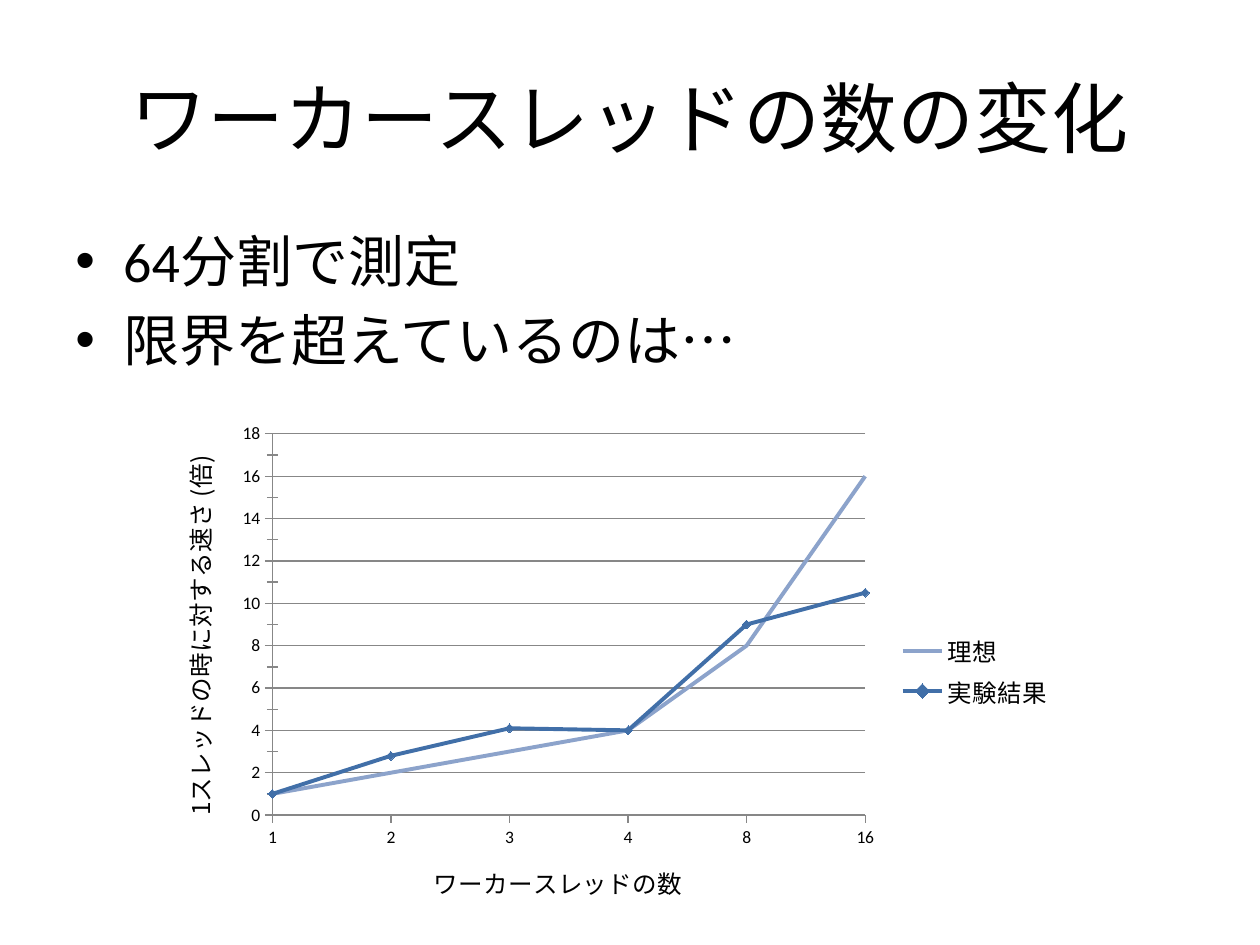
from dataclasses import dataclass

from lxml import etree
from pptx import Presentation
from pptx.chart.data import CategoryChartData
from pptx.dml.color import RGBColor
from pptx.enum import chart as ch, text as tx
from pptx.oxml import ns
from pptx.util import Inches, Pt


@dataclass(frozen=True)
class Theme:
    ink: RGBColor = RGBColor(0, 0, 0)
    rule: RGBColor = RGBColor(0x87, 0x87, 0x87)
    ideal: RGBColor = RGBColor(0x8C, 0xA3, 0xCB)
    measured: RGBColor = RGBColor(0x41, 0x6F, 0xA8)
    latin: str = "Calibri"
    japanese: str = "Noto Sans CJK JP"
    title: int = 44
    body: int = 32
    label: int = 14
    tick: int = 10


THEME = Theme()


def write_text(paragraph, content, *, size, font=THEME.latin, align=None):
    run = paragraph.add_run()
    run.text = content
    run.font.name = font
    run.font.size = Pt(size)
    run.font.bold = False
    run.font.color.rgb = THEME.ink
    east_asian = etree.Element(ns.qn("a:ea"), typeface=THEME.japanese)
    run.font._element.find(ns.qn("a:latin")).addnext(east_asian)
    paragraph.alignment = align


def place(part, box):
    part.left, part.top, part.width, part.height = box


def add_heading(slide, box, content):
    heading = slide.shapes.title
    place(heading, box)
    heading.text_frame.vertical_anchor = tx.MSO_ANCHOR.MIDDLE
    write_text(heading.text_frame.paragraphs[0], content,
               size=THEME.title, align=tx.PP_ALIGN.CENTER)


def add_points(slide, box, points):
    frame = slide.shapes.add_textbox(*box).text_frame
    frame.word_wrap = True
    for index, point in enumerate(points):
        paragraph = frame.add_paragraph() if index else frame.paragraphs[0]
        write_text(paragraph, point, size=THEME.body)
        paragraph.space_before = Pt(THEME.body * 0.2)
        properties = paragraph._p.get_or_add_pPr()
        properties.set("marL", str(Inches(0.38)))
        properties.set("indent", str(-Inches(0.38)))
        etree.SubElement(properties, ns.qn("a:buFont"), typeface="Arial")
        etree.SubElement(properties, ns.qn("a:buChar"), char="•")


def style_line(line, color, width):
    line.color.rgb = color
    line.width = Pt(width)


def style_axis(axis, title, tick):
    axis.major_tick_mark = tick
    axis.tick_labels.font.size = Pt(THEME.tick)
    style_line(axis.format.line, THEME.rule, 0.75)
    write_text(axis.axis_title.text_frame.paragraphs[0], title,
               size=THEME.label, font=THEME.japanese)


def set_plot_area(chart, **fractions):
    plot_area = chart._chartSpace.chart.plotArea
    for old in plot_area.findall(ns.qn("c:layout")):
        plot_area.remove(old)
    layout = etree.Element(ns.qn("c:layout"))
    manual = etree.SubElement(layout, ns.qn("c:manualLayout"))
    settings = {"layoutTarget": "inner", "xMode": "edge", "yMode": "edge"}
    for name, value in {**settings, **fractions}.items():
        etree.SubElement(manual, ns.qn(f"c:{name}"), val=str(value))
    plot_area.insert(0, layout)


def start_line_on_axis(value_axis):
    element = value_axis._element
    for old in element.findall(ns.qn("c:crossBetween")):
        element.remove(old)
    crossing = etree.Element(ns.qn("c:crossBetween"), val="midCat")
    element.find(ns.qn("c:crosses")).addnext(crossing)


def add_speedup_chart(slide, box):
    speedup = CategoryChartData()
    speedup.categories = ["1", "2", "3", "4", "8", "16"]
    speedup.add_series("理想", [1, 2, 3, 4, 8, 16])
    speedup.add_series("実験結果", [1, 2.8, 4.1, 4, 9, 10.5])
    chart = slide.shapes.add_chart(
        ch.XL_CHART_TYPE.LINE_MARKERS, *box, speedup).chart
    chart.has_title = False
    chart.font.name = THEME.latin
    chart.font.size = Pt(THEME.tick)
    chart.font.color.rgb = THEME.ink
    set_plot_area(chart, x=0.13, y=0.04, w=0.65, h=0.74)

    chart.has_legend = True
    chart.legend.position = ch.XL_LEGEND_POSITION.RIGHT
    chart.legend.include_in_layout = False
    chart.legend.font.name = THEME.japanese
    chart.legend.font.size = Pt(THEME.label)

    threads, speed = chart.category_axis, chart.value_axis
    style_axis(threads, "ワーカースレッドの数", ch.XL_TICK_MARK.OUTSIDE)
    style_axis(speed, "1スレッドの時に対する速さ (倍)", ch.XL_TICK_MARK.CROSS)
    speed.axis_title.text_frame._txBody.bodyPr.set("rot", "-5400000")
    speed.minor_tick_mark = ch.XL_TICK_MARK.CROSS
    speed.minimum_scale, speed.maximum_scale = 0, 18
    speed.major_unit, speed.minor_unit = 2, 1
    speed.has_major_gridlines = True
    style_line(speed.major_gridlines.format.line, THEME.rule, 0.75)
    start_line_on_axis(speed)

    plot = chart.plots[0]
    plot.vary_by_categories = False
    markers = (ch.XL_MARKER_STYLE.NONE, ch.XL_MARKER_STYLE.DIAMOND)
    colors = (THEME.ideal, THEME.measured)
    for series, color, marker in zip(plot.series, colors, markers):
        series.smooth = False
        style_line(series.format.line, color, 2.25)
        series.marker.style = marker
        if marker != ch.XL_MARKER_STYLE.NONE:
            series.marker.size = 5
            series.marker.format.fill.solid()
            series.marker.format.fill.fore_color.rgb = color
            style_line(series.marker.format.line, color, 0.75)


def main():
    deck = Presentation()
    deck.slide_width, deck.slide_height = Inches(10), Inches(7.5)
    slide = deck.slides.add_slide(deck.slide_layouts.get_by_name("Title Only"))
    margin, content_width = Inches(0.5), Inches(9)
    add_heading(slide, (margin, Inches(0.3), content_width, Inches(1.25)),
                "ワーカースレッドの数の変化")
    add_points(slide, (margin, Inches(1.75), content_width, Inches(1.29)),
               ["64分割で測定", "限界を超えているのは…"])
    add_speedup_chart(
        slide, (Inches(1.22), Inches(3.28), Inches(7.24), Inches(4.09)))
    deck.save("out.pptx")


if __name__ == "__main__":
    main()
